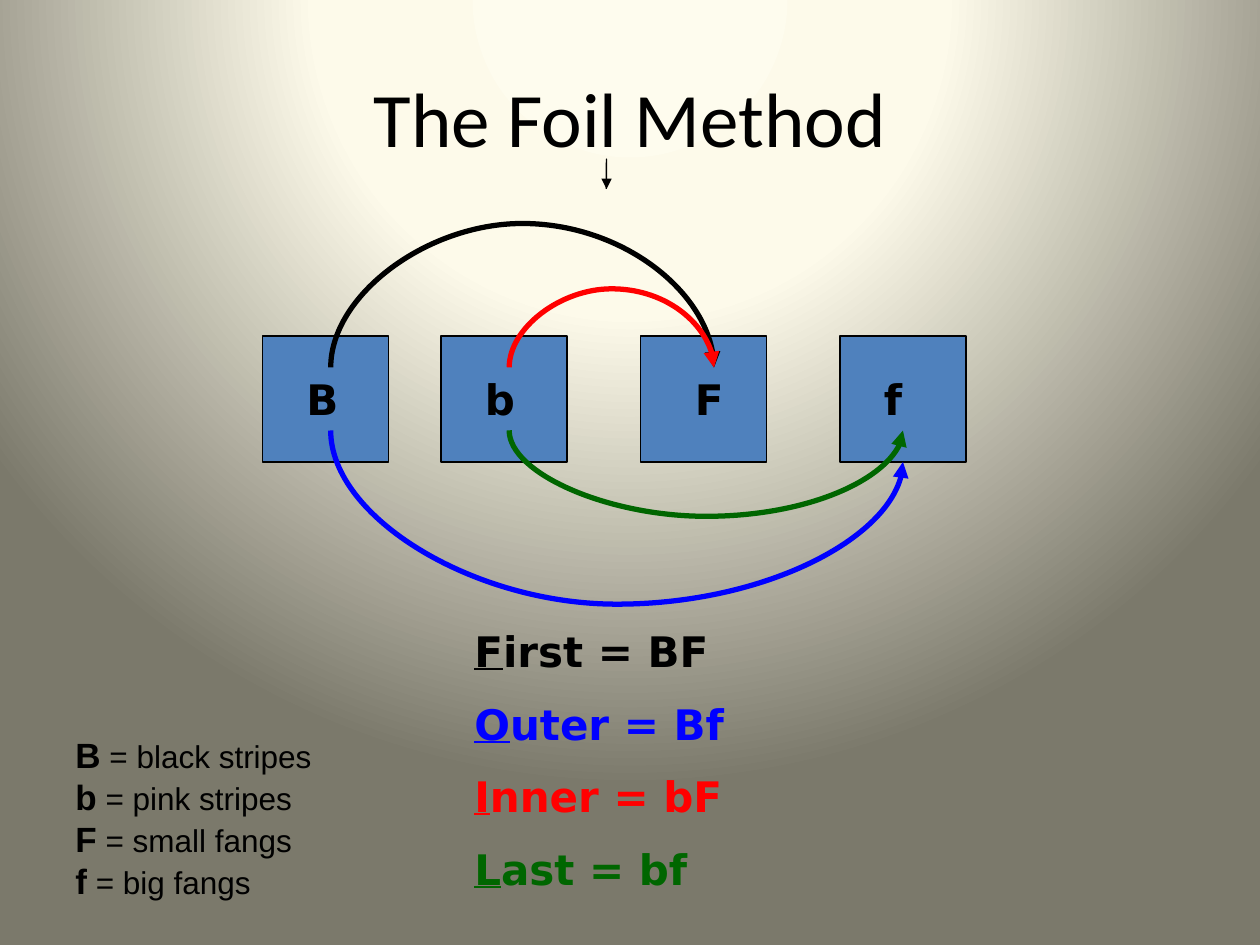
import pptx
import pptx.util
import pptx.dml.color
import pptx.enum.shapes
import pptx.enum.text
import pptx.oxml
import pptx.oxml.ns
import lxml.etree

Pt = pptx.util.Pt
qn = pptx.oxml.ns.qn
BLACK, BLUE, RED, GREEN = "000000", "0000FF", "FF0000", "006600"
THIN = 0.12


def paint(color, code):
    color.rgb = pptx.dml.color.RGBColor.from_string(code)


def add_back(slide):
    space = pptx.oxml.ns.nsdecls("a")
    stops = [(0, "FEFCEE"), (40, "FDFAEA"), (100, "7B796B")]
    marks = "".join(
        f'<a:gs pos="{pos * 1000}"><a:srgbClr val="{code}"/></a:gs>'
        for pos, code in stops
    )
    grad = pptx.oxml.parse_xml(
        f'<a:gradFill {space} rotWithShape="1"><a:gsLst>{marks}</a:gsLst>'
        '<a:path path="circle"><a:fillToRect l="50000" t="-80000" '
        'r="50000" b="180000"/></a:path></a:gradFill>'
    )
    fill = slide.background.fill
    fill.solid()
    old = slide.element.find(".//" + qn("p:bgPr") + "/" + qn("a:solidFill"))
    old.getparent().replace(old, grad)


def add_text(slide, left, top, width, height):
    box = slide.shapes.add_textbox(Pt(left), Pt(top), Pt(width), Pt(height))
    box.text_frame.word_wrap = True
    return box.text_frame


def next_para(frame, index):
    return frame.paragraphs[0] if index == 0 else frame.add_paragraph()


def style(font, name, size, code, bold=None):
    font.name, font.size, font.bold = name, Pt(size), bold
    paint(font.color, code)


def add_title(slide, text):
    frame = add_text(slide, 36, 21.6, 648, 90)
    frame.vertical_anchor = pptx.enum.text.MSO_ANCHOR.MIDDLE
    para = frame.paragraphs[0]
    para.text = text
    para.alignment = pptx.enum.text.PP_ALIGN.CENTER
    style(para.font, "Calibri", 44, BLACK)


def add_box(slide, left):
    kind = pptx.enum.shapes.MSO_SHAPE.RECTANGLE
    box = slide.shapes.add_shape(kind, Pt(left), Pt(192), Pt(72), Pt(72))
    box.shadow.inherit = False
    box.fill.solid()
    paint(box.fill.fore_color, "4F81BD")
    paint(box.line.color, BLACK)
    box.line.width = Pt(0.75)


def add_letter(slide, text, left, width):
    para = add_text(slide, left, 210, width, 36).paragraphs[0]
    para.text = text
    style(para.font, "DejaVu Sans", 24, BLACK, True)


def add_arc(slide, start, end, bend, code, weight=3):
    (x1, y1), (x2, y2) = start, end
    deep, span = max(y2 - y1, THIN), x2 - x1
    left = (x1 + x2 - deep) / 2
    top = (y1 + y2 - span) / 2
    kind = pptx.enum.shapes.MSO_CONNECTOR.CURVE
    arc = slide.shapes.add_connector(
        kind, Pt(left), Pt(top), Pt(left + deep), Pt(top + span)
    )
    paint(arc.line.color, code)
    arc.line.width = Pt(weight)
    props = arc.element.spPr
    frame = props.find(qn("a:xfrm"))
    turn, flip, sign = (90, "flipV", 1) if bend < 0 else (270, "flipH", 1)
    frame.set("rot", str(turn * 60000))
    frame.set(flip, "1")
    guides = props.find(qn("a:prstGeom")).get_or_add_avLst()
    ratio = round(sign * bend / deep * 100000)
    lxml.etree.SubElement(guides, qn("a:gd"), name="adj1", fmla=f"val {ratio}")
    lxml.etree.SubElement(props.find(qn("a:ln")), qn("a:tailEnd"), type="triangle")
    lxml.etree.SubElement(props, qn("a:effectLst"))


def add_foil(slide):
    frame = add_text(slide, 264, 354, 174, 165.6)
    rows = [
        ("First = BF", BLACK),
        ("Outer = Bf", BLUE),
        ("Inner = bF", RED),
        ("Last = bf", GREEN),
    ]
    for index, (text, code) in enumerate(rows):
        para = next_para(frame, index)
        if index:
            para.space_before = Pt(12.6)
        style(para.font, "DejaVu Sans", 24, code, True)
        head, rest = para.add_run(), para.add_run()
        head.text, rest.text = text[0], text[1:]
        head.font.underline = True


def add_key(slide):
    frame = add_text(slide, 36, 415.5, 159, 104.4)
    rows = [
        ("B", "black stripes"),
        ("b", "pink stripes"),
        ("F", "small fangs"),
        ("f", "big fangs"),
    ]
    for index, (gene, trait) in enumerate(rows):
        para = next_para(frame, index)
        for text, size, bold in [(gene, 20, True), (f" = {trait}", 18, False)]:
            run = para.add_run()
            run.text = text
            style(run.font, "Arial", size, BLACK, bold)


def main():
    deck = pptx.Presentation()
    deck.slide_width, deck.slide_height = Pt(720), Pt(540)
    slide = deck.slides.add_slide(deck.slide_layouts[6])
    add_back(slide)
    add_title(slide, "The Foil Method")
    add_arc(slide, (346.5, 108), (346.62, 108), -18, BLACK, 0.75)
    for left in (150, 252, 366, 480):
        add_box(slide, left)
    for text, left, width in [
        ("B", 168, 42), ("b", 270, 42), ("F", 390, 36), ("f", 498, 36)
    ]:
        add_letter(slide, text, left, width)
    add_arc(slide, (189, 210), (408, 210), -87, BLACK)
    add_arc(slide, (291, 246), (516, 246), 52, GREEN)
    add_arc(slide, (189, 246), (516, 264), 99.25, BLUE)
    add_arc(slide, (291, 210), (408, 210), -47.5, RED)
    add_foil(slide)
    add_key(slide)
    deck.save("out.pptx")


if __name__ == "__main__":
    main()
